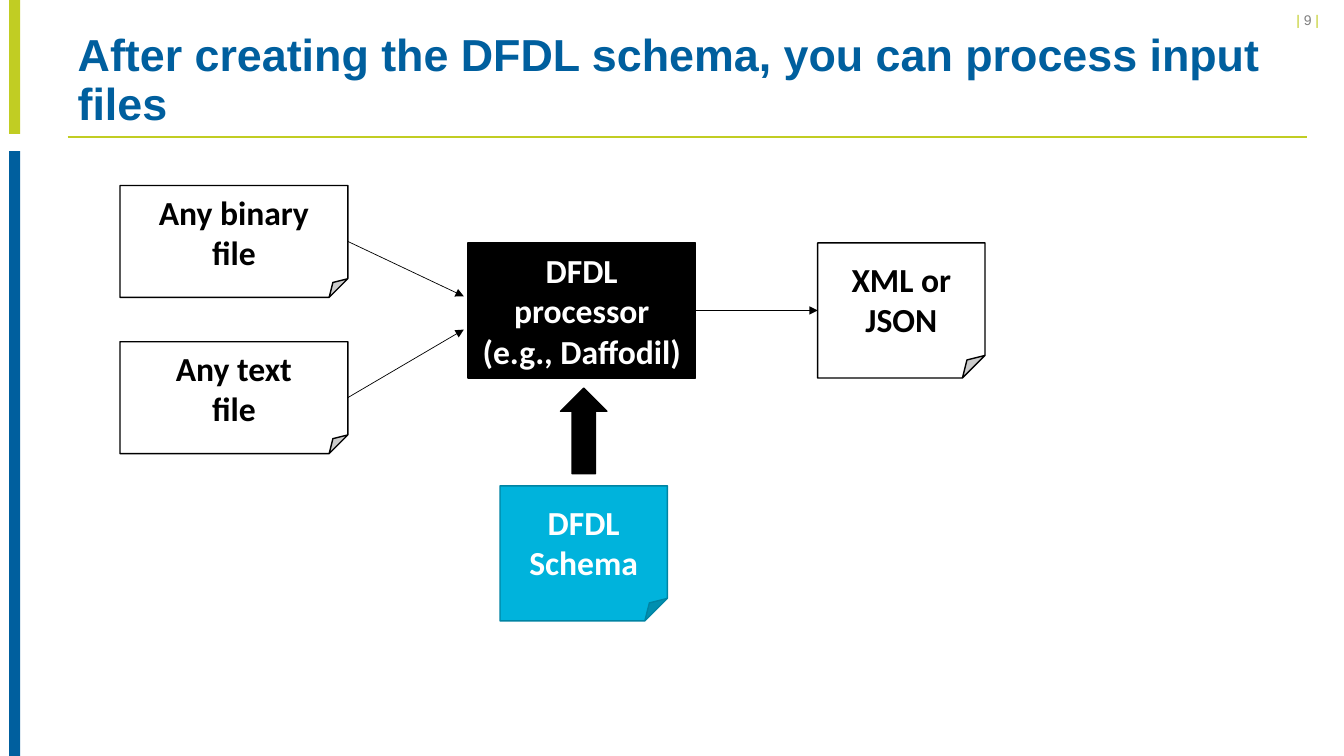
from dataclasses import dataclass

from lxml.etree import SubElement
from pptx import Presentation
from pptx.dml.color import RGBColor
from pptx.enum.shapes import MSO_CONNECTOR, MSO_SHAPE
from pptx.enum.text import MSO_ANCHOR, MSO_AUTO_SIZE, PP_ALIGN
from pptx.oxml.ns import qn
from pptx.util import Inches, Pt


@dataclass(frozen=True)
class Theme:
    lime: str = "C1CD23"
    blue: str = "005F9E"
    cyan: str = "00B3DC"
    dark_cyan: str = "0084A3"
    gray: str = "808080"
    black: str = "000000"
    white: str = "FFFFFF"
    heading_font: str = "Arial"
    diagram_font: str = "Calibri"
    title_size: int = 32
    diagram_size: int = 24
    number_size: int = 10


THEME = Theme()
RIGHT_SIDE = 3


def add_span(para, text, font, size, color, bold=False):
    span = para.add_run()
    span.text = text
    span.font.name = font
    span.font.size = Pt(size)
    span.font.bold = bold
    span.font.color.rgb = RGBColor.from_string(color)


def add_block(page, kind, left, top, width, height, fill, outline=None):
    block = page.shapes.add_shape(
        kind, Inches(left), Inches(top), Inches(width), Inches(height))
    block.shadow.inherit = False
    block.fill.solid()
    block.fill.fore_color.rgb = RGBColor.from_string(fill)
    if outline:
        block.line.color.rgb = RGBColor.from_string(outline)
        block.line.width = Pt(1)
    else:
        block.line.fill.background()
    return block


def add_node(page, kind, place, lines, fill, outline, text_color):
    node = add_block(page, kind, *place, fill, outline)
    frame = node.text_frame
    frame.word_wrap = True
    frame.vertical_anchor = MSO_ANCHOR.MIDDLE
    for index, line in enumerate(lines):
        para = frame.add_paragraph() if index else frame.paragraphs[0]
        para.alignment = PP_ALIGN.CENTER
        add_span(para, line, THEME.diagram_font, THEME.diagram_size,
                 text_color, bold=True)
    return node


def add_line(page, start, end, color, width, arrow=False):
    line = page.shapes.add_connector(
        MSO_CONNECTOR.STRAIGHT, *(Inches(value) for value in start + end))
    line.line.color.rgb = RGBColor.from_string(color)
    line.line.width = Pt(width)
    if arrow:
        SubElement(line.line._get_or_add_ln(), qn("a:tailEnd"), type="triangle")
    SubElement(line._element.spPr, qn("a:effectLst"))
    return line


def add_page_number(page, number):
    box = page.shapes.add_textbox(
        Inches(10.88), Inches(0.07), Inches(2.34), Inches(0.27))
    box.text_frame.word_wrap = True
    para = box.text_frame.paragraphs[0]
    para.alignment = PP_ALIGN.RIGHT
    para.space_after = Pt(6)
    for text, color in (("| ", THEME.lime), (f"{number} ", THEME.gray),
                        ("| ", THEME.lime)):
        add_span(para, text, THEME.heading_font, THEME.number_size, color)


def set_title(page, text):
    title = page.shapes.title
    title.left, title.top = Inches(0.67), Inches(0.4)
    title.width, title.height = Inches(12.29), Inches(0.82)
    frame = title.text_frame
    frame.word_wrap = True
    frame.auto_size = MSO_AUTO_SIZE.NONE
    frame.vertical_anchor = MSO_ANCHOR.MIDDLE
    para = frame.paragraphs[0]
    para.alignment = PP_ALIGN.LEFT
    para.line_spacing = 0.9
    add_span(para, text, THEME.heading_font, THEME.title_size, THEME.blue,
             bold=True)


def main():
    deck = Presentation()
    deck.slide_width, deck.slide_height = Inches(13.33), Inches(7.5)
    page = deck.slides.add_slide(deck.slide_layouts[5])

    # Side bars, title rule and page number
    add_block(page, MSO_SHAPE.RECTANGLE, 0.09, 0, 0.11, 1.33, THEME.lime)
    add_block(page, MSO_SHAPE.RECTANGLE, 0.09, 1.5, 0.11, 6, THEME.blue)
    add_line(page, (0.67, 1.36), (12.96, 1.36), THEME.lime, 1)
    add_page_number(page, 9)
    set_title(page,
              "After creating the DFDL schema, you can process input files")

    # Processor and its output
    processor = add_node(
        page, MSO_SHAPE.RECTANGLE, (4.64, 2.41, 2.26, 1.34),
        ("DFDL processor", "(e.g., Daffodil)"),
        THEME.black, THEME.black, THEME.white)
    output = add_node(
        page, MSO_SHAPE.FOLDED_CORNER, (8.11, 2.41, 1.66, 1.34),
        ("XML or JSON",), THEME.white, THEME.black, THEME.black)
    flow = add_line(page, (6.9, 3.08), (8.11, 3.08), THEME.black, 0.5, True)
    flow.begin_connect(processor, RIGHT_SIDE)
    flow.end_connect(output, 1)

    # Input files, each with an arrow to the processor
    for top, kind, arrow_end in ((1.84, "binary", 2.94), (3.39, "text", 3.27)):
        source = add_node(
            page, MSO_SHAPE.FOLDED_CORNER, (1.19, top, 2.26, 1.11),
            (f"Any {kind}", "file"), THEME.white, THEME.black, THEME.black)
        feed = add_line(page, (3.45, top + 0.55), (4.6, arrow_end),
                        THEME.black, 0.5, True)
        feed.begin_connect(source, RIGHT_SIDE)

    # Schema feeding the processor from below
    add_block(page, MSO_SHAPE.UP_ARROW, 5.56, 3.85, 0.46, 0.85,
              THEME.black, THEME.black)
    add_node(page, MSO_SHAPE.FOLDED_CORNER, (4.96, 4.82, 1.66, 1.34),
             ("DFDL", "Schema"), THEME.cyan, THEME.dark_cyan, THEME.white)

    deck.save("out.pptx")


if __name__ == "__main__":
    main()
